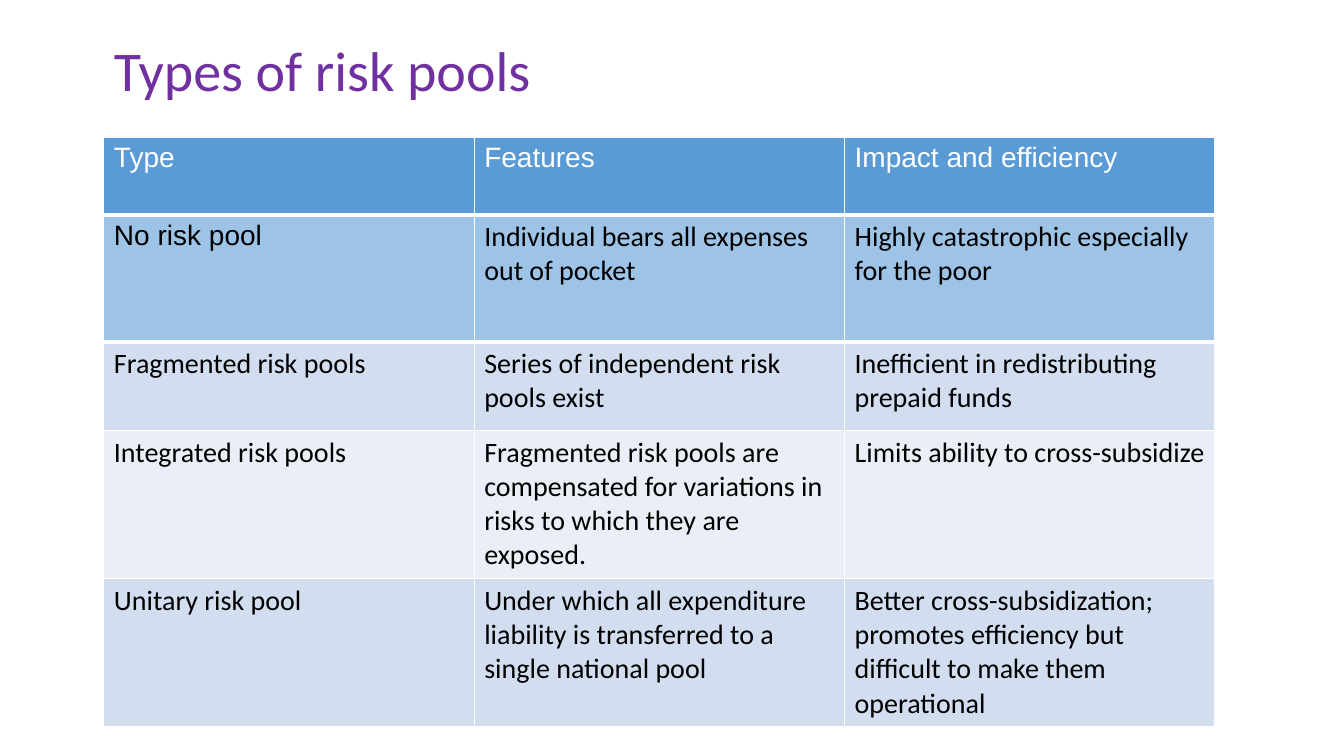
from dataclasses import dataclass

from lxml import etree
from pptx import Presentation
from pptx.dml.color import RGBColor
from pptx.enum.text import MSO_ANCHOR, PP_ALIGN
from pptx.oxml.ns import qn
from pptx.util import Inches, Pt

MIDDLE = MSO_ANCHOR.MIDDLE
LEFT_ALIGNED = PP_ALIGN.LEFT
TITLE_ONLY_LAYOUT = 5


@dataclass(frozen=True)
class Theme:
    title_color: str = "7030A0"
    header_fill: str = "5B9BD5"
    header_text: str = "FFFFFF"
    body_text: str = "000000"
    highlight_fill: str = "9DC3E6"
    dark_band: str = "D2DEEF"
    light_band: str = "EAEFF7"
    border: str = "FFFFFF"
    body_font: str = "Calibri"
    label_font: str = "Arial"
    title_size: int = 40
    table_size: int = 20
    thin_line: int = 1
    thick_line: int = 3


@dataclass(frozen=True)
class Row:
    texts: tuple
    height: float
    fill: str
    color: str
    fonts: tuple
    bottom_line: int


class SlideBuilder:
    def __init__(self, slide, theme):
        self.slide = slide
        self.theme = theme

    def add_run(self, paragraph, text, font_name, size, color):
        run = paragraph.add_run()
        run.text = text
        run.font.name = font_name
        run.font.size = Pt(size)
        run.font.bold = False
        run.font.color.rgb = RGBColor.from_string(color)

    def add_title(self, text, left, top, width, height):
        title = self.slide.shapes.title
        title.left, title.top = Inches(left), Inches(top)
        title.width, title.height = Inches(width), Inches(height)
        title.text_frame.vertical_anchor = MIDDLE
        title.text_frame.word_wrap = True
        paragraph = title.text_frame.paragraphs[0]
        paragraph.alignment = LEFT_ALIGNED
        paragraph.line_spacing = 0.9
        theme = self.theme
        self.add_run(paragraph, text, theme.body_font, theme.title_size, theme.title_color)

    def set_borders(self, cell, bottom_line):
        """Draw all four cell edges; they must precede the fill in the XML."""
        properties = cell._tc.get_or_add_tcPr()
        thin = self.theme.thin_line
        edges = (("lnL", thin), ("lnR", thin), ("lnT", thin), ("lnB", bottom_line))
        for position, (edge, width) in enumerate(edges):
            line = etree.Element(qn(f"a:{edge}"), w=str(Pt(width)))
            fill = etree.SubElement(line, qn("a:solidFill"))
            etree.SubElement(fill, qn("a:srgbClr"), val=self.theme.border)
            properties.insert(position, line)

    def add_table(self, rows, left, top, width):
        column_count = len(rows[0].texts)
        height = sum(row.height for row in rows)
        frame = self.slide.shapes.add_table(
            len(rows), column_count, Inches(left), Inches(top), Inches(width), Inches(height)
        )
        table = frame.table
        table.first_row = False
        table.horz_banding = False
        for row_index, row in enumerate(rows):
            table.rows[row_index].height = Inches(row.height)
            for column_index, (text, font_name) in enumerate(zip(row.texts, row.fonts)):
                cell = table.cell(row_index, column_index)
                cell.fill.solid()
                cell.fill.fore_color.rgb = RGBColor.from_string(row.fill)
                self.set_borders(cell, row.bottom_line)
                paragraph = cell.text_frame.paragraphs[0]
                self.add_run(paragraph, text, font_name, self.theme.table_size, row.color)


def main():
    presentation = Presentation()
    presentation.slide_width = Inches(13.33)
    presentation.slide_height = Inches(7.5)
    slide = presentation.slides.add_slide(presentation.slide_layouts[TITLE_ONLY_LAYOUT])
    theme = Theme()
    builder = SlideBuilder(slide, theme)

    left, width = 1.03, 11.02
    header_top, header_height = 1.36, 0.77
    label_fonts = (theme.label_font,) * 3
    body_fonts = (theme.body_font,) * 3
    first_row_fonts = (theme.label_font, theme.body_font, theme.body_font)

    header = Row(
        ("Type", "Features", "Impact and efficiency"),
        header_height, theme.header_fill, theme.header_text, label_fonts, theme.thick_line,
    )
    risk_pools = [
        Row(
            ("No risk pool",
             "Individual bears all expenses out of pocket",
             "Highly catastrophic especially for the poor"),
            1.26, theme.highlight_fill, theme.body_text, first_row_fonts, theme.thick_line,
        ),
        Row(
            ("Fragmented risk pools",
             "Series of independent risk pools exist",
             "Inefficient in redistributing prepaid funds"),
            0.88, theme.dark_band, theme.body_text, body_fonts, theme.thin_line,
        ),
        Row(
            ("Integrated risk pools",
             "Fragmented risk pools are compensated for variations in risks "
             "to which they are exposed.",
             "Limits ability to cross-subsidize"),
            1.47, theme.light_band, theme.body_text, body_fonts, theme.thin_line,
        ),
        Row(
            ("Unitary risk pool",
             "Under which all expenditure liability is transferred to a single national pool",
             "Better cross-subsidization; promotes efficiency but difficult "
             "to make them operational"),
            1.47, theme.dark_band, theme.body_text, body_fonts, theme.thin_line,
        ),
    ]

    builder.add_table(risk_pools, left, header_top + header_height, width)
    builder.add_table([header], left, header_top, width)
    builder.add_title("Types of risk pools", left, 0, width, 1.45)
    presentation.save("out.pptx")


if __name__ == "__main__":
    main()
